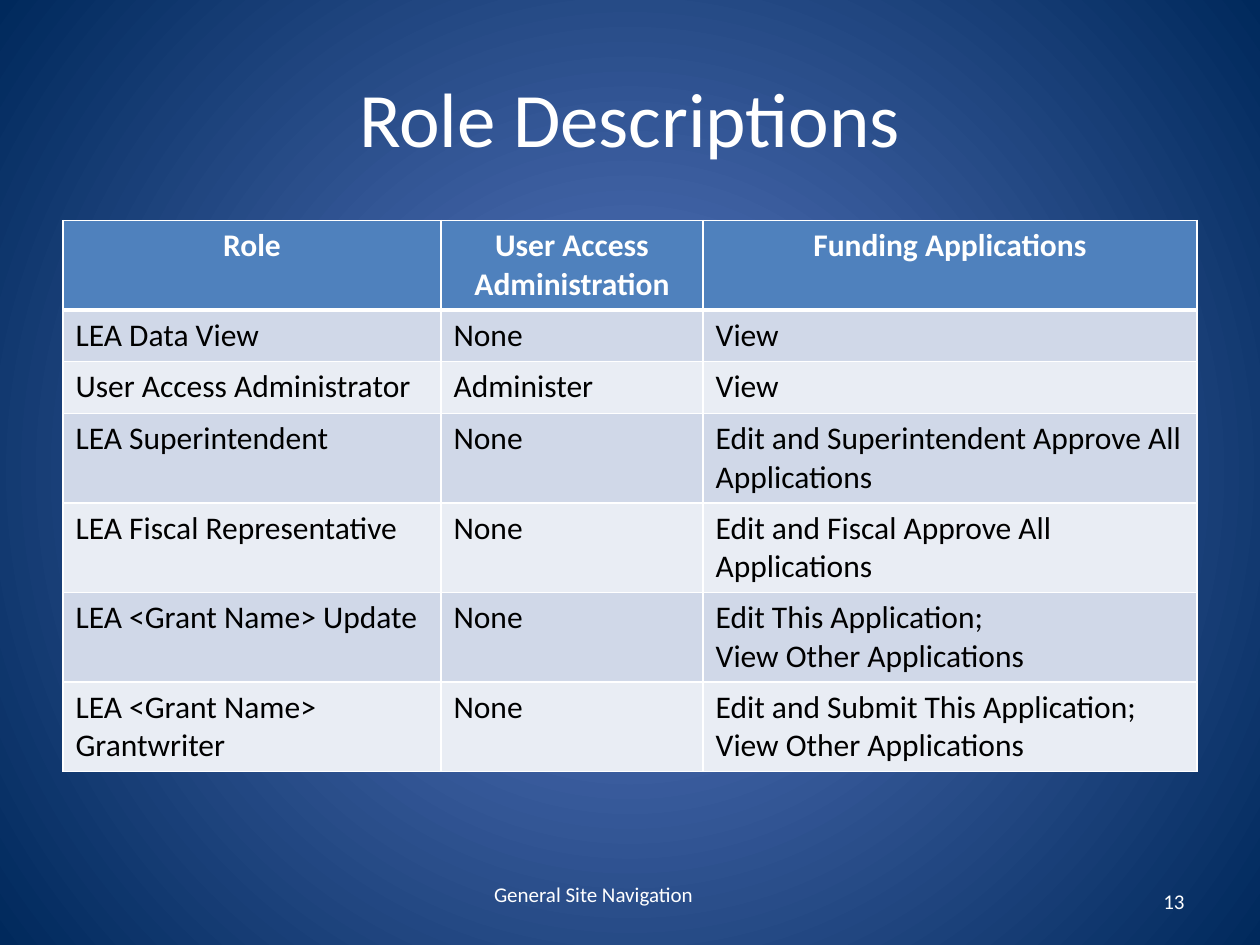
from lxml import etree
from pptx import Presentation
from pptx.dml.color import RGBColor
from pptx.enum import text
from pptx.oxml import ns
from pptx.util import Inches, Pt

WHITE, BLACK = "FFFFFF", "000000"
HEADER, BANDS = "4F81BD", ("D0D8E8", "E9EDF4")
LEFT, CENTER, RIGHT = text.PP_ALIGN.LEFT, text.PP_ALIGN.CENTER, text.PP_ALIGN.RIGHT
TOP, MIDDLE = text.MSO_ANCHOR.TOP, text.MSO_ANCHOR.MIDDLE


def rgb(value):
    return RGBColor.from_string(value)


def write(tf, content, size=18, color=WHITE, bold=False, align=LEFT):
    for i, line in enumerate(content.split("\n")):
        p = tf.paragraphs[0] if i == 0 else tf.add_paragraph()
        p.alignment = align
        r = p.add_run()
        r.text = line
        r.font.name, r.font.size, r.font.bold = "Calibri", Pt(size), bold
        r.font.color.rgb = rgb(color)


prs = Presentation()
prs.slide_width, prs.slide_height = Inches(10), Inches(7.5)
s = prs.slides.add_slide(prs.slide_layouts[5])

# Background: gradient running out from the centre
fill = s.background.fill
fill.gradient()
for stop, (position, color) in zip(fill.gradient_stops, ((0, "5E7CC5"), (1, "00295C"))):
    stop.position = position
    stop.color.rgb = rgb(color)
lin = s.background._cSld.find(".//" + ns.qn("a:lin"))
radial = etree.Element(ns.qn("a:path"), path="circle")
etree.SubElement(radial, ns.qn("a:fillToRect"), l="50000", t="50000", r="50000", b="50000")
lin.getparent().replace(lin, radial)

# Title
title = s.shapes.title
title.left, title.top, title.width, title.height = (Inches(v) for v in (0.5, 0.3, 9, 1.25))
title.text_frame.vertical_anchor = MIDDLE
write(title.text_frame, "Role Descriptions", size=44, align=CENTER)

# Table of roles
rows = [
    ("Role", "User Access Administration", "Funding Applications"),
    ("LEA Data View", "None", "View"),
    ("User Access Administrator", "Administer", "View"),
    ("LEA Superintendent", "None", "Edit and Superintendent Approve All Applications"),
    ("LEA Fiscal Representative", "None", "Edit and Fiscal Approve All Applications"),
    ("LEA <Grant Name> Update", "None", "Edit This Application;\nView Other Applications"),
    ("LEA <Grant Name> Grantwriter", "None",
     "Edit and Submit This Application;\nView Other Applications"),
]
row_height = 0.41
table = s.shapes.add_table(len(rows), 3, Inches(0.5), Inches(1.75), Inches(9),
                           Inches(row_height * len(rows))).table
for column, width in zip(table.columns, (3, 2.08, 3.92)):
    column.width = Inches(width)

for i, row in enumerate(rows):
    table.rows[i].height = Inches(row_height)
    is_header = i == 0
    for j, content in enumerate(row):
        cell = table.cell(i, j)
        # Borders: the rule under the header is thicker
        tc_pr = cell._tc.get_or_add_tcPr()
        for side in "LRTB":
            thick = (is_header and side == "B") or (i == 1 and side == "T")
            ln = etree.SubElement(tc_pr, ns.qn(f"a:ln{side}"), w=str(Pt(3 if thick else 1)))
            solid = etree.SubElement(ln, ns.qn("a:solidFill"))
            etree.SubElement(solid, ns.qn("a:srgbClr"), val=WHITE)
        cell.fill.solid()
        cell.fill.fore_color.rgb = rgb(HEADER if is_header else BANDS[(i - 1) % 2])
        write(cell.text_frame, content, color=WHITE if is_header else BLACK,
              bold=is_header, align=CENTER if is_header else LEFT)

# Footer and slide number
for content, left, width, align, anchor in (
    ("General Site Navigation", 3.75, 1.92, CENTER, TOP),
    ("13", 7.17, 2.33, RIGHT, MIDDLE),
):
    tf = s.shapes.add_textbox(Inches(left), Inches(6.95), Inches(width), Inches(0.4)).text_frame
    tf.word_wrap = True
    tf.vertical_anchor = anchor
    write(tf, content, size=12, align=align)

prs.save("out.pptx")
